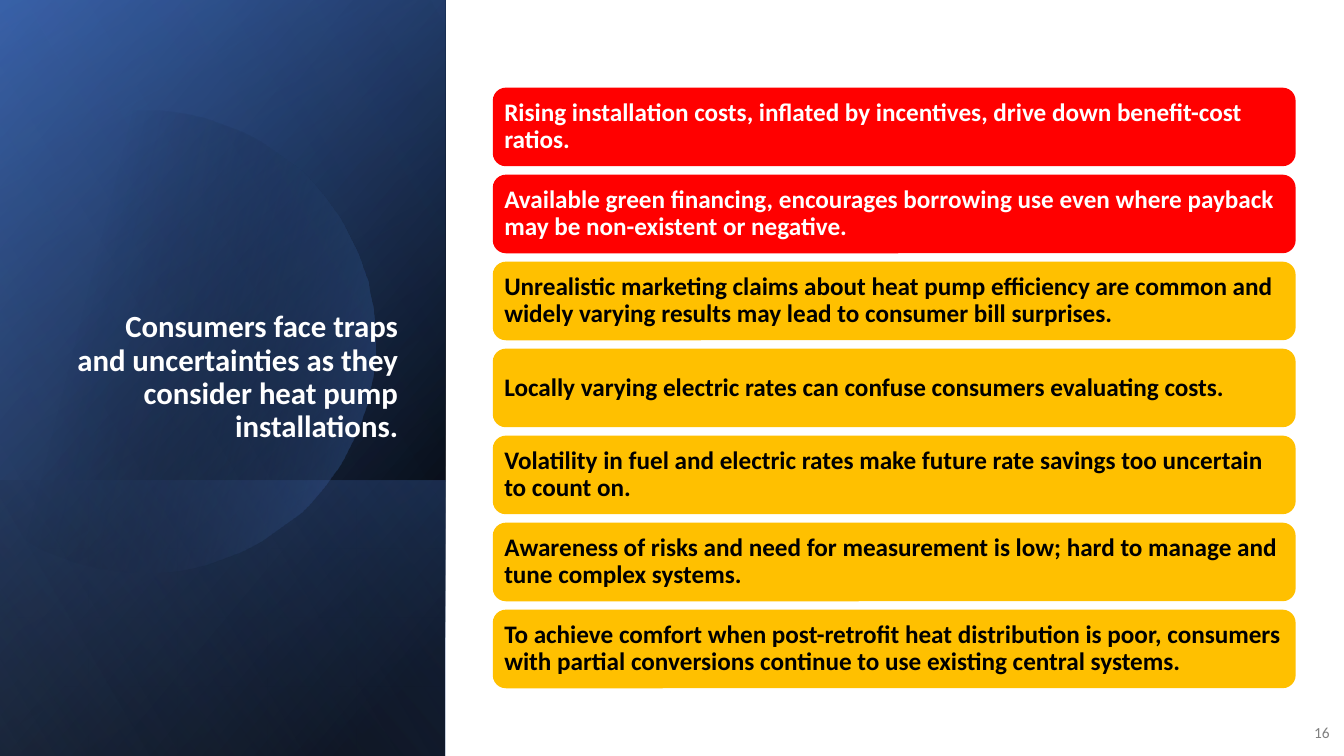
import math

from lxml import etree
from pptx import Presentation
from pptx.dml.color import RGBColor
from pptx.enum import shapes, text
from pptx.oxml.ns import nsdecls, qn
from pptx.util import Pt

COLORS = {
    "white": "FFFFFF", "black": "000000", "grey": "808080",
    "red": "FF0000", "amber": "FFC000",
    "deep_blue": "2F5597", "blue": "4472C4", "pale_blue": "8FAADC",
}
FONT = "Calibri"
TRAPS = [
    ("Rising installation costs, inflated by incentives, drive down "
     "benefit-cost ratios.", "red", "white"),
    ("Available green financing, encourages borrowing use even where payback "
     "may be non-existent or negative.", "red", "white"),
    ("Unrealistic marketing claims about heat pump efficiency are common and "
     "widely varying results may lead to consumer bill surprises.", "amber", "black"),
    ("Locally varying electric rates can confuse consumers evaluating costs.",
     "amber", "black"),
    ("Volatility in fuel and electric rates make future rate savings too "
     "uncertain to count on.", "amber", "black"),
    ("Awareness of risks and need for measurement is low; hard to manage and "
     "tune complex systems.", "amber", "black"),
    ("To achieve comfort when post-retrofit heat distribution is poor, consumers "
     "with partial conversions continue to use existing central systems.",
     "amber", "black"),
]


def write(frame, words, size, color, align, anchor, bold=True, spacing=0.9):
    frame.text = words
    frame.word_wrap = True
    frame.auto_size = text.MSO_AUTO_SIZE.NONE
    frame.vertical_anchor = anchor
    paragraph = frame.paragraphs[0]
    paragraph.alignment = align
    paragraph.line_spacing = spacing
    font = paragraph.runs[0].font
    font.name, font.size, font.bold = FONT, Pt(size), bold
    font.color.rgb = RGBColor.from_string(COLORS[color])


def fill_gradient(shape, angle, stops):
    """Fill with (position %, colour, opacity %) stops and drop the outline."""
    stop_xml = "".join(
        f'<a:gs pos="{position * 1000}"><a:srgbClr val="{COLORS[color]}">'
        f'<a:alpha val="{opacity * 1000}"/></a:srgbClr></a:gs>'
        for position, color, opacity in stops)
    gradient = etree.fromstring(
        f'<a:gradFill {nsdecls("a")} rotWithShape="1"><a:gsLst>{stop_xml}</a:gsLst>'
        f'<a:lin ang="{angle * 60000}" scaled="0"/></a:gradFill>')
    shape.shadow.inherit = False
    shape.line.fill.background()
    shape.fill.background()
    properties = shape._element.spPr
    properties.replace(properties.find(qn("a:noFill")), gradient)


def add_wash(slide, box, angle, stops):
    """Cover the box with a gradient rectangle that is mirrored and turned by 90°."""
    left, top, width, height = box
    wash = slide.shapes.add_shape(
        shapes.MSO_SHAPE.RECTANGLE,
        Pt(left + (width - height) / 2), Pt(top + (height - width) / 2),
        Pt(height), Pt(width))
    wash.rotation = 90
    wash._element.spPr.find(qn("a:xfrm")).set("flipH", "1")
    fill_gradient(wash, angle, stops)


def add_disc(slide, box):
    """Draw a large circle cut off by a vertical chord at the left of the box."""
    left, top, _, _ = box
    center_x, center_y, radius, reach = left + 103, top + 244, 165, 133.5
    steps = 90
    angles = [math.radians(reach * (2 * i / steps - 1)) for i in range(steps + 1)]
    arc = [(center_x + radius * math.cos(a), center_y + radius * math.sin(a))
           for a in angles]
    builder = slide.shapes.build_freeform(*arc[0], scale=Pt(1))
    builder.add_line_segments(arc[1:], close=True)
    fill_gradient(builder.convert_to_shape(), 14,
                  [(29, "black", 0), (100, "blue", 43)])


def add_title_panel(slide, box):
    left, top, width, height = box
    foot = (left, top + 343, width, height - 343)
    add_wash(slide, box, 50, [(8, "black", 100), (100, "deep_blue", 100)])
    add_wash(slide, box, 30, [(0, "black", 0), (99, "blue", 46)])
    add_wash(slide, foot, 130, [(2, "blue", 29), (100, "black", 30)])
    add_disc(slide, box)
    add_wash(slide, box, 120, [(0, "black", 0), (99, "pale_blue", 11)])

    title = slide.shapes.title
    title.left, title.top = Pt(left + 46), Pt(top + 132.5)
    title.width, title.height = Pt(245.5), Pt(188.5)
    write(title.text_frame,
          "Consumers face traps and uncertainties as they consider heat pump "
          "installations.", 22, "white", text.PP_ALIGN.RIGHT, text.MSO_ANCHOR.BOTTOM)
    slide.shapes._spTree.append(title._element)  # bring in front of the washes


def add_trap_list(slide, box):
    left, top, width, height = box
    gap = 6
    bar_height = (height - gap * (len(TRAPS) - 1)) / len(TRAPS)
    for i, (words, fill, ink) in enumerate(TRAPS):
        bar = slide.shapes.add_shape(
            shapes.MSO_SHAPE.ROUNDED_RECTANGLE,
            Pt(left), Pt(top + i * (bar_height + gap)), Pt(width), Pt(bar_height))
        bar.shadow.inherit = False
        bar.fill.solid()
        bar.fill.fore_color.rgb = RGBColor.from_string(COLORS[fill])
        bar.line.fill.background()
        frame = bar.text_frame
        write(frame, words, 18, ink, text.PP_ALIGN.LEFT, text.MSO_ANCHOR.MIDDLE)
        frame.margin_left = frame.margin_right = Pt(5.5)
        frame.margin_top = frame.margin_bottom = Pt(5)


def add_page_number(slide, box):
    number = slide.shapes.add_textbox(*(Pt(length) for length in box))
    write(number.text_frame, "16", 11, "grey", text.PP_ALIGN.RIGHT,
          text.MSO_ANCHOR.MIDDLE, bold=False, spacing=1.0)


def main():
    deck = Presentation()
    deck.slide_width, deck.slide_height = Pt(960), Pt(540)
    slide = deck.slides.add_slide(deck.slide_layouts[5])
    add_title_panel(slide, (0, 0, 318, 540))
    add_trap_list(slide, (352, 62.6, 573.5, 429))
    add_page_number(slide, (921.5, 508.5, 35.5, 28.5))
    deck.save("out.pptx")


if __name__ == "__main__":
    main()
